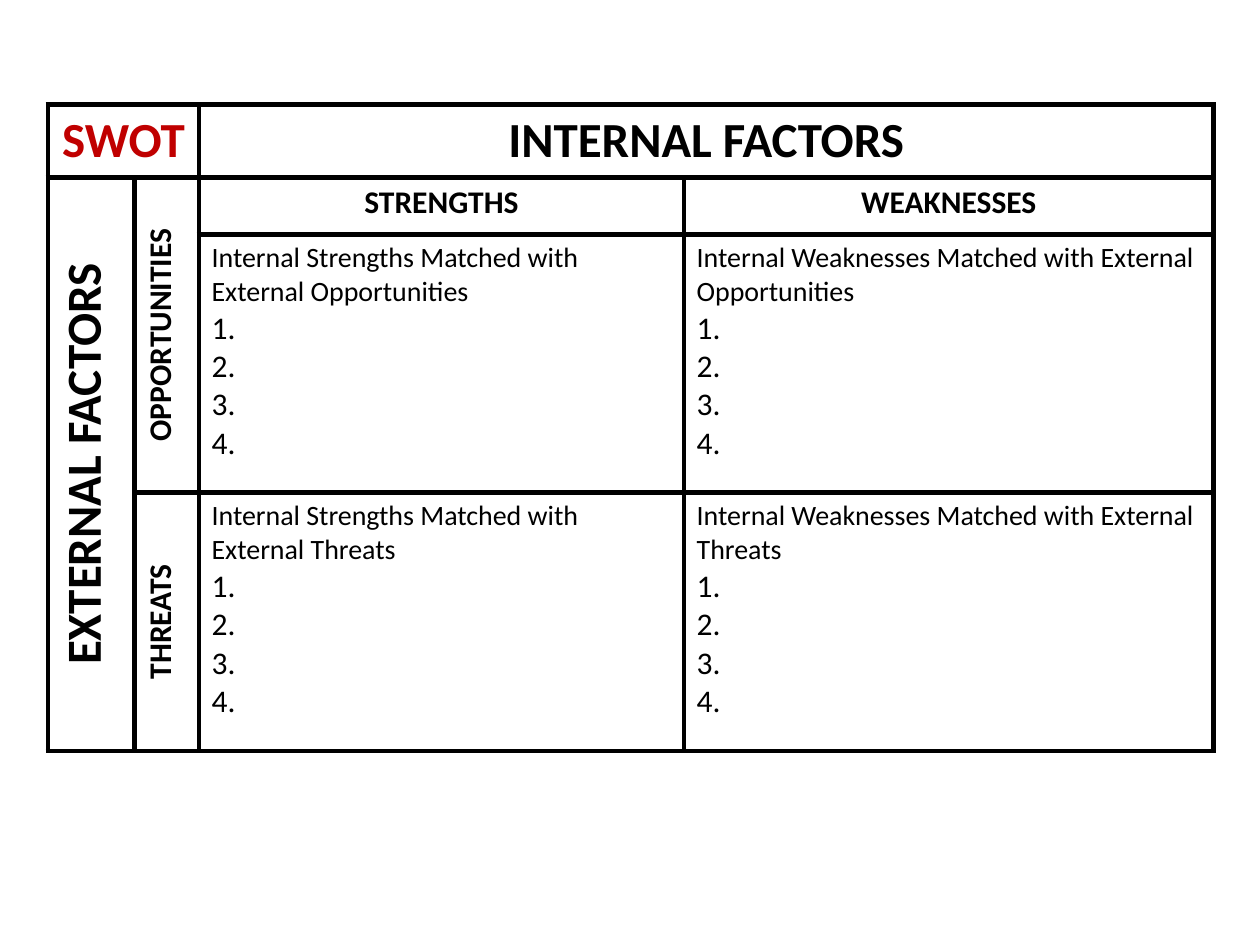
from lxml.etree import SubElement
from pptx import Presentation
from pptx.dml.color import RGBColor
from pptx.enum.text import MSO_ANCHOR, PP_ALIGN
from pptx.oxml.ns import qn
from pptx.util import Inches, Pt

COLORS = {"text": "000000", "accent": "C00000", "border": "000000"}
FONT = "Calibri"
COL_WIDTHS = [0.69, 0.51, 3.85, 4.2]
ROW_HEIGHTS = [0.58, 0.45, 2.05, 2.05]
INTERNAL = ["Strengths", "Weaknesses"]
EXTERNAL = ["Opportunities", "Threats"]


def write(p, text, size=18, bold=False, color="text", align=PP_ALIGN.LEFT):
    p.alignment = align
    r = p.add_run()
    r.text = text
    r.font.name = FONT
    r.font.size = Pt(size)
    r.font.bold = bold
    r.font.color.rgb = RGBColor.from_string(COLORS[color])


def write_heading(cell, text, size=18, color="text", vertical=False):
    write(cell.text_frame.paragraphs[0], text, size=size, bold=True,
          color=color, align=PP_ALIGN.CENTER)
    if vertical:
        cell._tc.get_or_add_tcPr().set("vert", "vert270")


def write_match(cell, internal, external):
    """Fill a quadrant with its caption and four numbered lines."""
    tf = cell.text_frame
    write(tf.paragraphs[0],
          f"Internal {internal} Matched with External {external}", size=16)
    for number in range(1, 5):
        write(tf.add_paragraph(), f"{number}.")


def style_cell(cell, width=3):
    """Clear the fill and draw a solid border on all four sides."""
    cell.fill.background()
    tcPr = cell._tc.get_or_add_tcPr()
    for i, side in enumerate(("lnL", "lnR", "lnT", "lnB")):
        ln = SubElement(tcPr, qn(f"a:{side}"), w=str(Pt(width)))
        fill = SubElement(ln, qn("a:solidFill"))
        SubElement(fill, qn("a:srgbClr"), val=COLORS["border"])
        tcPr.insert(i, ln)


def add_swot_table(s, left, top, width, height):
    table = s.shapes.add_table(len(ROW_HEIGHTS), len(COL_WIDTHS),
                               left, top, width, height).table
    table.first_row = table.horz_banding = False
    for column, w in zip(table.columns, COL_WIDTHS):
        column.width = Inches(w)
    for row, h in zip(table.rows, ROW_HEIGHTS):
        row.height = Inches(h)
    for cell in table.iter_cells():
        style_cell(cell)

    for first, last in (((0, 0), (0, 1)), ((0, 2), (0, 3)),
                        ((1, 0), (3, 0)), ((1, 1), (2, 1))):
        table.cell(*first).merge(table.cell(*last))

    corner = table.cell(0, 0)
    corner.vertical_anchor = MSO_ANCHOR.MIDDLE
    write_heading(corner, "SWOT", size=28, color="accent")
    write_heading(table.cell(0, 2), "INTERNAL FACTORS", size=28)
    write_heading(table.cell(1, 0), "EXTERNAL FACTORS", size=28, vertical=True)

    for col, internal in enumerate(INTERNAL, start=2):
        write_heading(table.cell(1, col), internal.upper())
        for row, external in enumerate(EXTERNAL, start=2):
            write_match(table.cell(row, col), internal, external)
    for row, external in zip((1, 3), EXTERNAL):
        write_heading(table.cell(row, 1), external.upper(), vertical=True)


def main():
    prs = Presentation()
    prs.slide_width, prs.slide_height = Inches(10), Inches(7.5)
    s = prs.slides.add_slide(prs.slide_layouts[6])
    add_swot_table(s, Inches(0.38), Inches(0.83),
                   Inches(sum(COL_WIDTHS)), Inches(sum(ROW_HEIGHTS)))
    prs.save("out.pptx")


if __name__ == "__main__":
    main()
